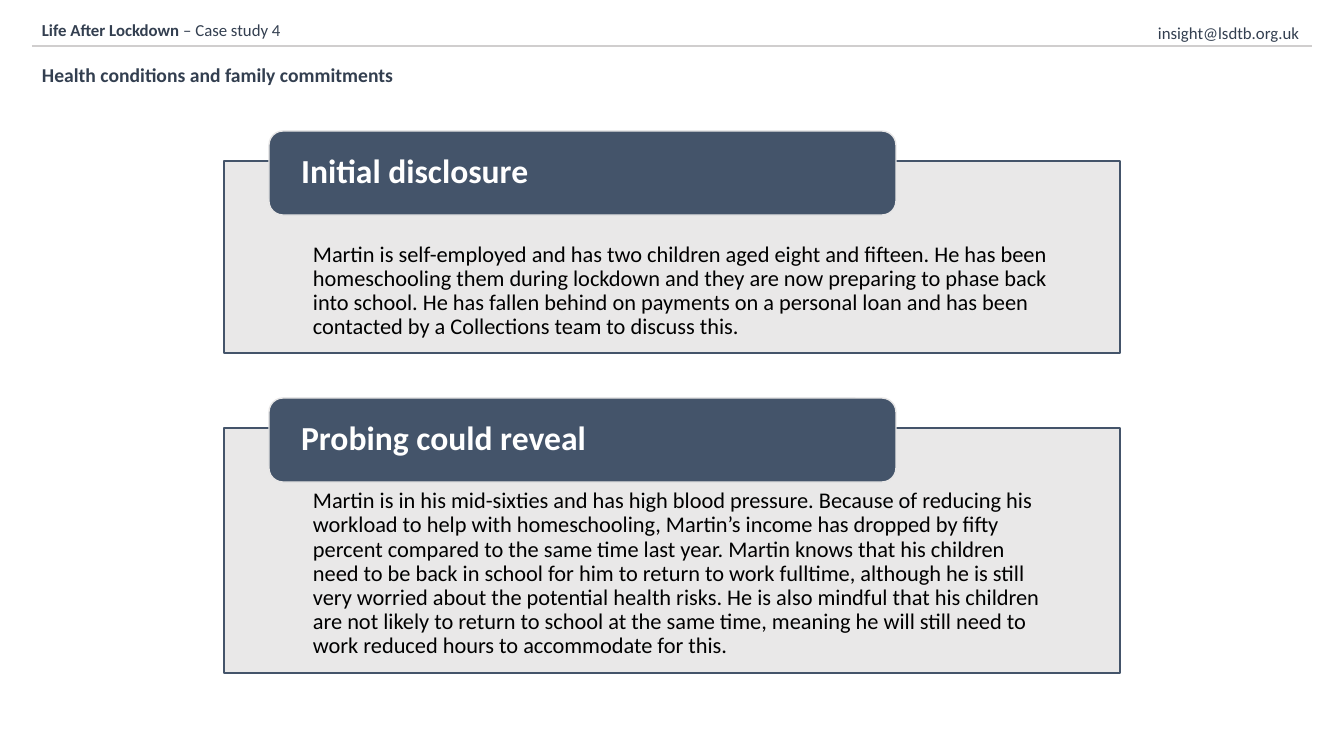
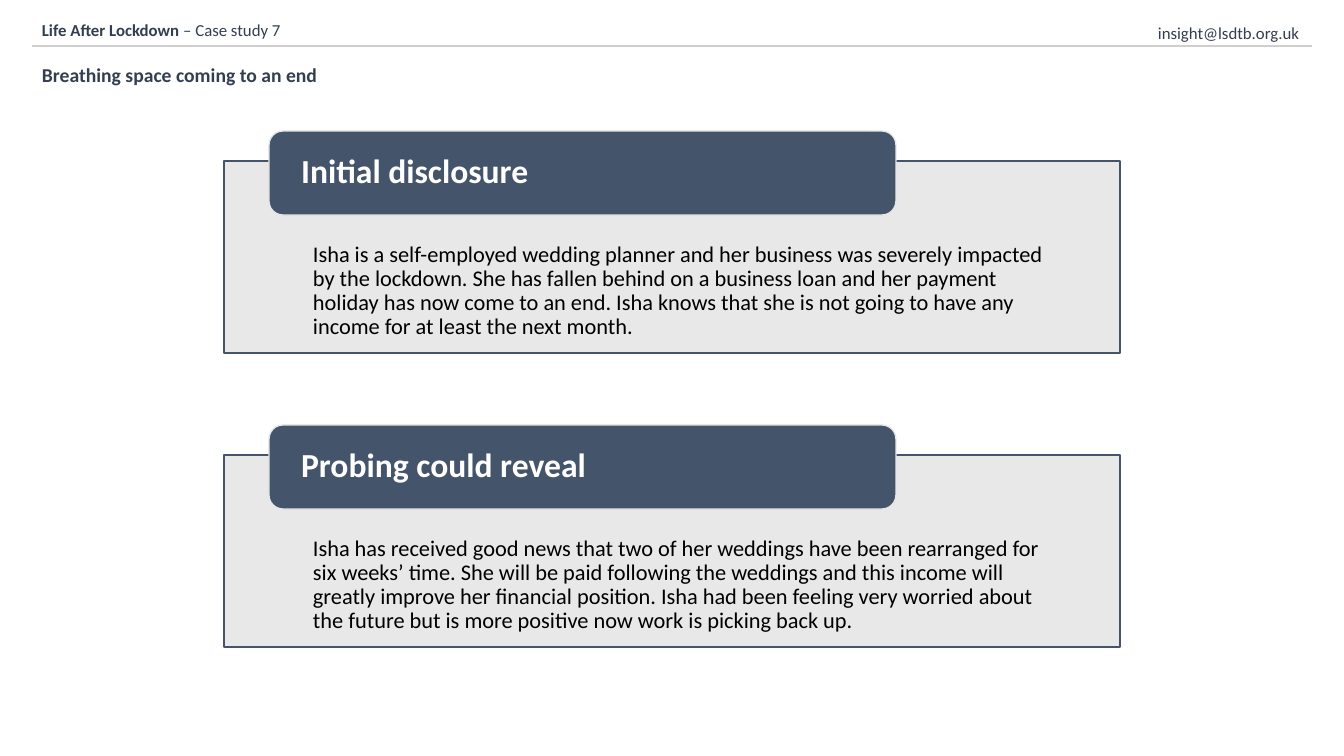
import pptx
import pptx.dml.color
import pptx.enum.shapes
import pptx.enum.text
import pptx.oxml.ns
import pptx.util
from lxml import etree

EMU_PER_PX = 12192000 / 1344
COLORS = {
    "ink": "333F50",
    "rule": "D0CECE",
    "panel": "E7E6E6",
    "accent": "44546A",
    "body": "000000",
    "white": "FFFFFF",
}
FONT = "Calibri"
SHAPES = pptx.enum.shapes.MSO_SHAPE
ANCHORS = pptx.enum.text.MSO_ANCHOR

PANEL_LEFT, PANEL_WIDTH = 224, 896
LABEL_LEFT, LABEL_WIDTH, LABEL_HEIGHT = 269, 627, 84
LABEL_RISE = 30
FIRST_LABEL_TOP = 131

CASES = [
    {
        "number": 4,
        "title": "Health conditions and family commitments",
        "gap": 45,
        "panels": [
            ("Initial disclosure", 192, 81,
             "Martin is self-employed and has two children aged eight and fifteen. He has been "
             "homeschooling them during lockdown and they are now preparing to phase back into "
             "school. He has fallen behind on payments on a personal loan and has been contacted "
             "by a Collections team to discuss this."),
            ("Probing could reveal", 245, 59,
             "Martin is in his mid-sixties and has high blood pressure. Because of reducing his "
             "workload to help with homeschooling, Martin’s income has dropped by fifty percent "
             "compared to the same time last year. Martin knows that his children need to be back "
             "in school for him to return to work fulltime, although he is still very worried "
             "about the potential health risks. He is also mindful that his children are not "
             "likely to return to school at the same time, meaning he will still need to work "
             "reduced hours to accommodate for this."),
        ],
    },
    {
        "number": 7,
        "title": "Breathing space coming to an end",
        "gap": 72,
        "panels": [
            ("Initial disclosure", 192, 81,
             "Isha is a self-employed wedding planner and her business was severely impacted by "
             "the lockdown. She has fallen behind on a business loan and her payment holiday has "
             "now come to an end. Isha knows that she is not going to have any income for at "
             "least the next month."),
            ("Probing could reveal", 192, 81,
             "Isha has received good news that two of her weddings have been rearranged for six "
             "weeks’ time. She will be paid following the weddings and this income will greatly "
             "improve her financial position. Isha had been feeling very worried about the future "
             "but is more positive now work is picking back up."),
        ],
    },
]


def px(*lengths):
    return [pptx.util.Emu(round(length * EMU_PER_PX)) for length in lengths]


def color(name):
    return pptx.dml.color.RGBColor.from_string(COLORS[name])


def write(shape, text, size=12, ink="ink", bold=False, spacing=1.0):
    """Append a run to the first paragraph of the shape."""
    paragraph = shape.text_frame.paragraphs[0]
    paragraph.alignment = pptx.enum.text.PP_ALIGN.LEFT
    paragraph.line_spacing = spacing
    run = paragraph.add_run()
    run.text = text
    run.font.name = FONT
    run.font.size = pptx.util.Pt(size)
    run.font.bold = bold
    run.font.color.rgb = color(ink)


class CaseDeck:
    def __init__(self):
        self.presentation = pptx.Presentation()
        self.presentation.slide_width, self.presentation.slide_height = px(1344, 756)
        self.slide = None

    def add_slide(self):
        self.slide = self.presentation.slides.add_slide(self.presentation.slide_layouts[6])

    def textbox(self, left, top, width, height):
        box = self.slide.shapes.add_textbox(*px(left, top, width, height))
        box.text_frame.word_wrap = True
        return box

    def rule(self, left, right, y):
        line = self.slide.shapes.add_connector(
            pptx.enum.shapes.MSO_CONNECTOR.STRAIGHT, *px(left, y, right, y))
        line.line.color.rgb = color("rule")
        line.line.width = pptx.util.Pt(1.5)
        etree.SubElement(line._element.spPr, pptx.oxml.ns.qn("a:effectLst"))

    def block(self, kind, place, fill, outline, insets, opacity=100):
        """Add a filled shape; insets are left, top, right, bottom."""
        shape = self.slide.shapes.add_shape(kind, *px(*place))
        shape.shadow.inherit = False
        shape.fill.solid()
        shape.fill.fore_color.rgb = color(fill)
        if opacity < 100:
            rgb = shape._element.spPr.find(".//" + pptx.oxml.ns.qn("a:srgbClr"))
            etree.SubElement(rgb, pptx.oxml.ns.qn("a:alpha"), val=str(opacity * 1000))
        shape.line.color.rgb = color(outline)
        shape.line.width = pptx.util.Pt(1)
        frame = shape.text_frame
        frame.word_wrap = True
        frame.vertical_anchor = ANCHORS.MIDDLE
        (frame.margin_left, frame.margin_top,
         frame.margin_right, frame.margin_bottom) = px(*insets)
        return shape

    def header(self, number, title):
        heading = self.textbox(32, 15, 607, 30)
        write(heading, "Life After Lockdown ", bold=True)
        write(heading, f"– Case study {number}")
        self.rule(32, 1312, 46)
        write(self.textbox(1148, 8, 164, 37), "insight@lsdtb.org.uk", spacing=1.5)
        write(self.textbox(32, 46, 607, 42), title, size=14, bold=True, spacing=1.5)

    def panel(self, label, top, height, text_top, text):
        body = self.block(SHAPES.RECTANGLE, (PANEL_LEFT, top, PANEL_WIDTH, height),
                          "panel", "accent", (89, text_top, 70, 12), opacity=90)
        write(body, text, size=16, ink="body", spacing=0.9)
        tab = self.block(SHAPES.ROUNDED_RECTANGLE,
                         (LABEL_LEFT, top - LABEL_RISE, LABEL_WIDTH, LABEL_HEIGHT),
                         "accent", "panel", (28, 0, 28, 0))
        write(tab, label, size=24, ink="white", bold=True, spacing=0.9)


def main():
    deck = CaseDeck()
    for case in CASES:
        deck.add_slide()
        deck.header(case["number"], case["title"])
        top = FIRST_LABEL_TOP + LABEL_RISE
        for label, height, text_top, text in case["panels"]:
            deck.panel(label, top, height, text_top, text)
            top += height + case["gap"] + LABEL_RISE
    deck.presentation.save("out.pptx")


if __name__ == "__main__":
    main()
